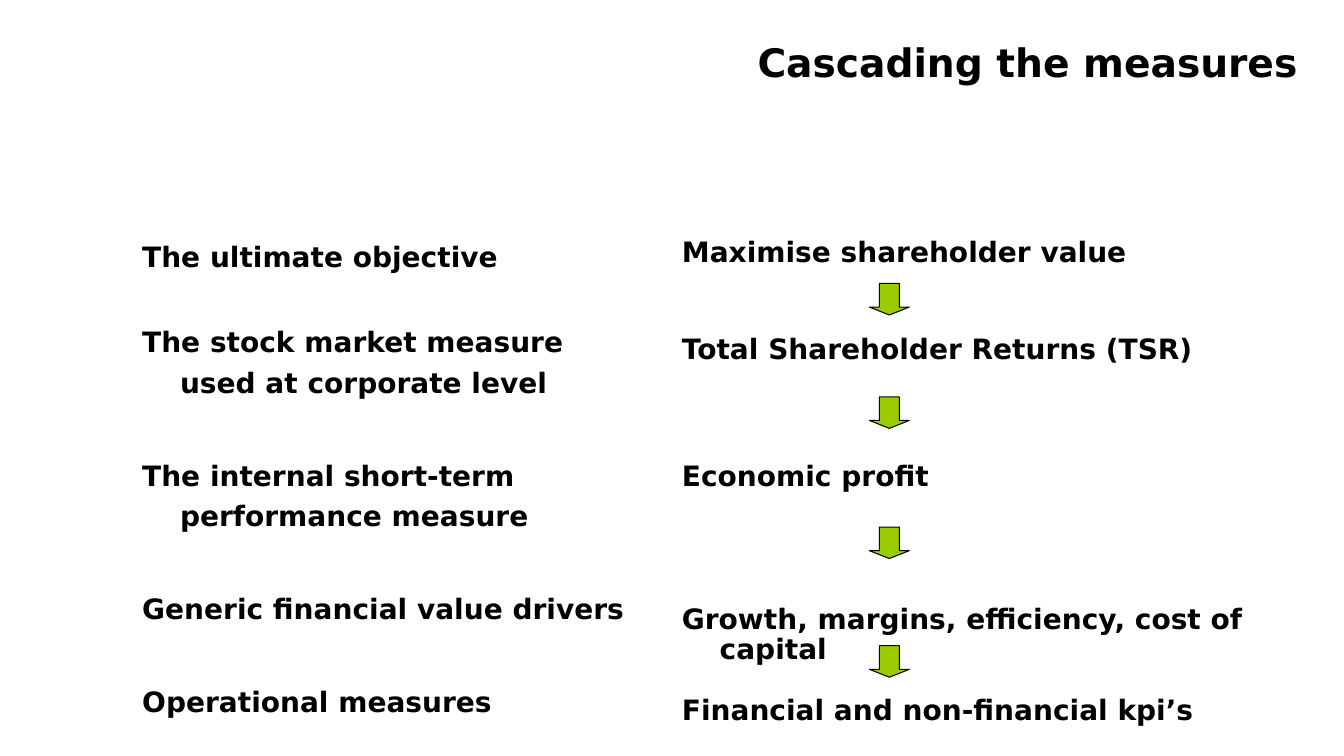
from typing import NamedTuple

from pptx import Presentation
from pptx import util as u
from pptx.dml.color import RGBColor
from pptx.enum import shapes, text

PX = 9525  # EMU per px, 96 px to the inch
FONT = "DejaVu Sans"
BLACK, GREEN = "000000", "99CC00"
HANGING = 36
ARROW_LEFT, ARROW_WIDTH, ARROW_HEIGHT = 828, 38, 30
ARROW_TOPS = (270, 378, 502, 615)


class Box(NamedTuple):
    left: int
    top: int
    width: int
    height: int


class Entry(NamedTuple):
    gap: int  # space above, in px
    words: str


class Column(NamedTuple):
    box: Box
    line_spacing: float
    entries: tuple[Entry, ...]


TITLE = Box(64, 29, 1181, 59)
COLUMNS = (
    Column(Box(126, 217, 498, 432), 1.2, (
        Entry(3, "The ultimate objective"),
        Entry(43, "The stock market measure used at corporate level"),
        Entry(50, "The internal short-term performance measure"),
        Entry(50, "Generic financial value drivers"),
        Entry(50, "Operational measures"),
    )),
    Column(Box(640, 222, 564, 432), 0.9, (
        Entry(3, "Maximise shareholder value"),
        Entry(64, "Total Shareholder Returns (TSR)"),
        Entry(92, "Economic profit"),
        Entry(107, "Growth, margins, efficiency, cost of capital"),
        Entry(29, "Financial and non-financial kpi’s"),
    )),
)


def px(n: int) -> u.Emu:
    return u.Emu(n * PX)


def color(value: str) -> RGBColor:
    return RGBColor.from_string(value)


def place(box: Box) -> list[u.Emu]:
    return [px(n) for n in box]


def write(p, words: str, size: int) -> None:
    p.text = words
    for r in p.runs:
        r.font.name = FONT
        r.font.size = u.Pt(size)
        r.font.bold = True
        r.font.color.rgb = color(BLACK)


def add_text_frame(s, box: Box):
    tf = s.shapes.add_textbox(*place(box)).text_frame
    tf.word_wrap = True
    return tf


def add_title(s, words: str) -> None:
    tf = add_text_frame(s, TITLE)
    tf.vertical_anchor = text.MSO_ANCHOR.MIDDLE
    p = tf.paragraphs[0]
    p.alignment = text.PP_ALIGN.RIGHT
    write(p, words, 28)


def add_column(s, column: Column) -> None:
    tf = add_text_frame(s, column.box)
    for i, entry in enumerate(column.entries):
        p = tf.add_paragraph() if i else tf.paragraphs[0]
        write(p, entry.words, 20)
        p.line_spacing = column.line_spacing
        p.space_before = px(entry.gap)
        p.space_after = u.Pt(0)
        pPr = p._p.get_or_add_pPr()
        pPr.set("marL", str(px(HANGING)))
        pPr.set("indent", str(-px(HANGING)))


def add_arrow(s, top: int) -> None:
    box = Box(ARROW_LEFT, top, ARROW_WIDTH, ARROW_HEIGHT)
    sp = s.shapes.add_shape(shapes.MSO_SHAPE.DOWN_ARROW, *place(box))
    sp.adjustments[0] = 0.5
    sp.adjustments[1] = 0.25
    sp.shadow.inherit = False
    sp.fill.solid()
    sp.fill.fore_color.rgb = color(GREEN)
    sp.line.color.rgb = color(BLACK)
    sp.line.width = u.Pt(0.75)


def main() -> None:
    prs = Presentation()
    prs.slide_width, prs.slide_height = px(1280), px(720)
    s = prs.slides.add_slide(prs.slide_layouts[6])
    add_title(s, "Cascading the measures")
    for column in COLUMNS:
        add_column(s, column)
    for top in ARROW_TOPS:
        add_arrow(s, top)
    prs.save("out.pptx")


if __name__ == "__main__":
    main()
